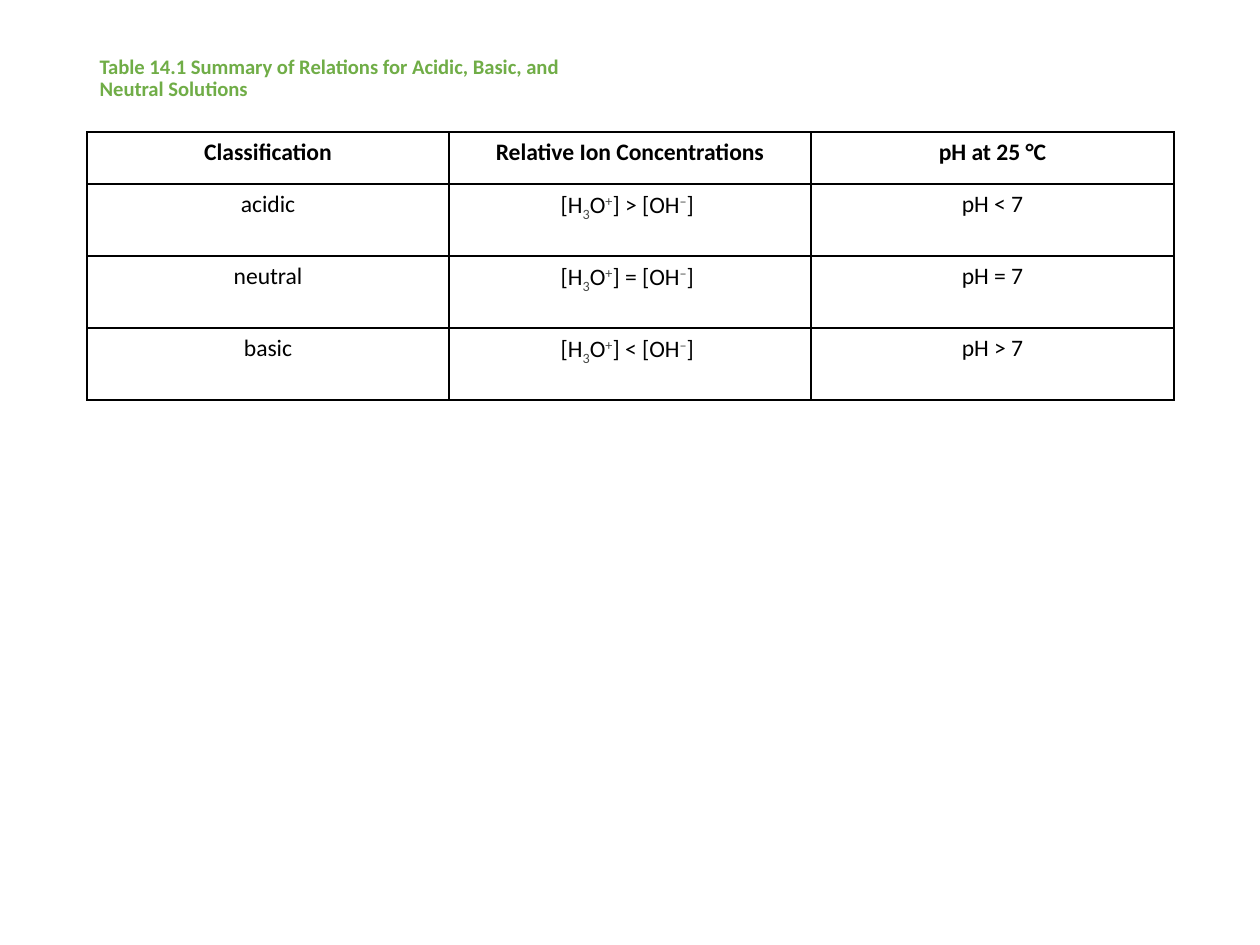
from lxml import etree
from pptx import Presentation
from pptx.dml.color import RGBColor
from pptx.enum.text import MSO_ANCHOR, MSO_AUTO_SIZE, PP_ALIGN
from pptx.oxml.ns import qn
from pptx.util import Pt

EMU_PER_PX = 914400 // 126
LEFT, CENTER = PP_ALIGN.LEFT, PP_ALIGN.CENTER
MIDDLE = MSO_ANCHOR.MIDDLE
NO_AUTOFIT = MSO_AUTO_SIZE.NONE

FONT = "Calibri"
GREEN = RGBColor(0x70, 0xAD, 0x47)
BLACK = RGBColor(0x00, 0x00, 0x00)
GRAY = RGBColor(0x46, 0x48, 0x46)
TITLE_ONLY = 5

TITLE_LINES = [
    "Table 14.1 Summary of Relations for Acidic, Basic, and",
    "Neutral Solutions",
]
HEADINGS = ["Classification", "Relative Ion Concentrations", "pH at 25 °C"]
RELATIONS = [("acidic", ">", "<"), ("neutral", "=", "="), ("basic", "<", ">")]
COLUMN_WIDTHS = [362, 362, 363]
ROW_HEIGHTS = [52, 72, 72, 72]
BORDER_PT = 0.96
SUBSCRIPT, SUPERSCRIPT = -25, 30


def px(length):
    return length * EMU_PER_PX


def add_run(paragraph, text, size=13.5, color=BLACK, bold=False, baseline=0):
    run = paragraph.add_run()
    run.text = text
    run.font.name = FONT
    run.font.size = Pt(size)
    run.font.bold = bold
    run.font.color.rgb = color
    if baseline:
        run._r.get_or_add_rPr().set("baseline", str(baseline * 1000))


def add_title(slide):
    title = slide.shapes.title
    title.left, title.top, title.width, title.height = map(px, (87, 50, 1086, 58))
    frame = title.text_frame
    frame.word_wrap = True
    frame.auto_size = NO_AUTOFIT
    frame.vertical_anchor = MIDDLE
    paragraph = frame.paragraphs[0]
    paragraph.alignment = LEFT
    paragraph.line_spacing = 0.9
    for index, line in enumerate(TITLE_LINES):
        if index:
            paragraph.add_line_break()
        add_run(paragraph, line, 11.8, GREEN, bold=True)


def add_borders(cell):
    properties = cell._tc.get_or_add_tcPr()
    for side in ("lnL", "lnR", "lnT", "lnB"):
        border = etree.SubElement(properties, qn(f"a:{side}"), w=str(Pt(BORDER_PT)))
        fill = etree.SubElement(border, qn("a:solidFill"))
        etree.SubElement(fill, qn("a:srgbClr"), val=str(BLACK))


def ion_runs(relation):
    return [
        ("[H", 0), ("3", SUBSCRIPT), ("O", 0), ("+", SUPERSCRIPT),
        (f"] {relation} [OH", 0), ("–", SUPERSCRIPT), ("] ", 0),
    ]


def fill_cell(cell, runs, bold):
    add_borders(cell)
    cell.fill.background()
    paragraph = cell.text_frame.paragraphs[0]
    paragraph.alignment = CENTER
    for text, baseline in runs:
        size, color = (14, GRAY) if baseline else (13.5, BLACK)
        add_run(paragraph, text, size, color, bold, baseline)


def add_relations_table(slide):
    rows = [[[(heading, 0)] for heading in HEADINGS]]
    for name, ion_relation, ph_relation in RELATIONS:
        rows.append([[(name, 0)], ion_runs(ion_relation), [(f"pH {ph_relation} 7", 0)]])
    table = slide.shapes.add_table(
        len(rows), len(HEADINGS), px(87), px(132),
        px(sum(COLUMN_WIDTHS)), px(sum(ROW_HEIGHTS)),
    ).table
    table.first_row = True
    table.horz_banding = False
    for column, width in zip(table.columns, COLUMN_WIDTHS):
        column.width = px(width)
    for row_index, (row, height) in enumerate(zip(table.rows, ROW_HEIGHTS)):
        row.height = px(height)
        for cell, runs in zip(row.cells, rows[row_index]):
            fill_cell(cell, runs, bold=row_index == 0)


def main():
    presentation = Presentation()
    presentation.slide_width = px(1260)
    presentation.slide_height = px(945)
    slide = presentation.slides.add_slide(presentation.slide_layouts[TITLE_ONLY])
    add_title(slide)
    add_relations_table(slide)
    presentation.save("out.pptx")


if __name__ == "__main__":
    main()
